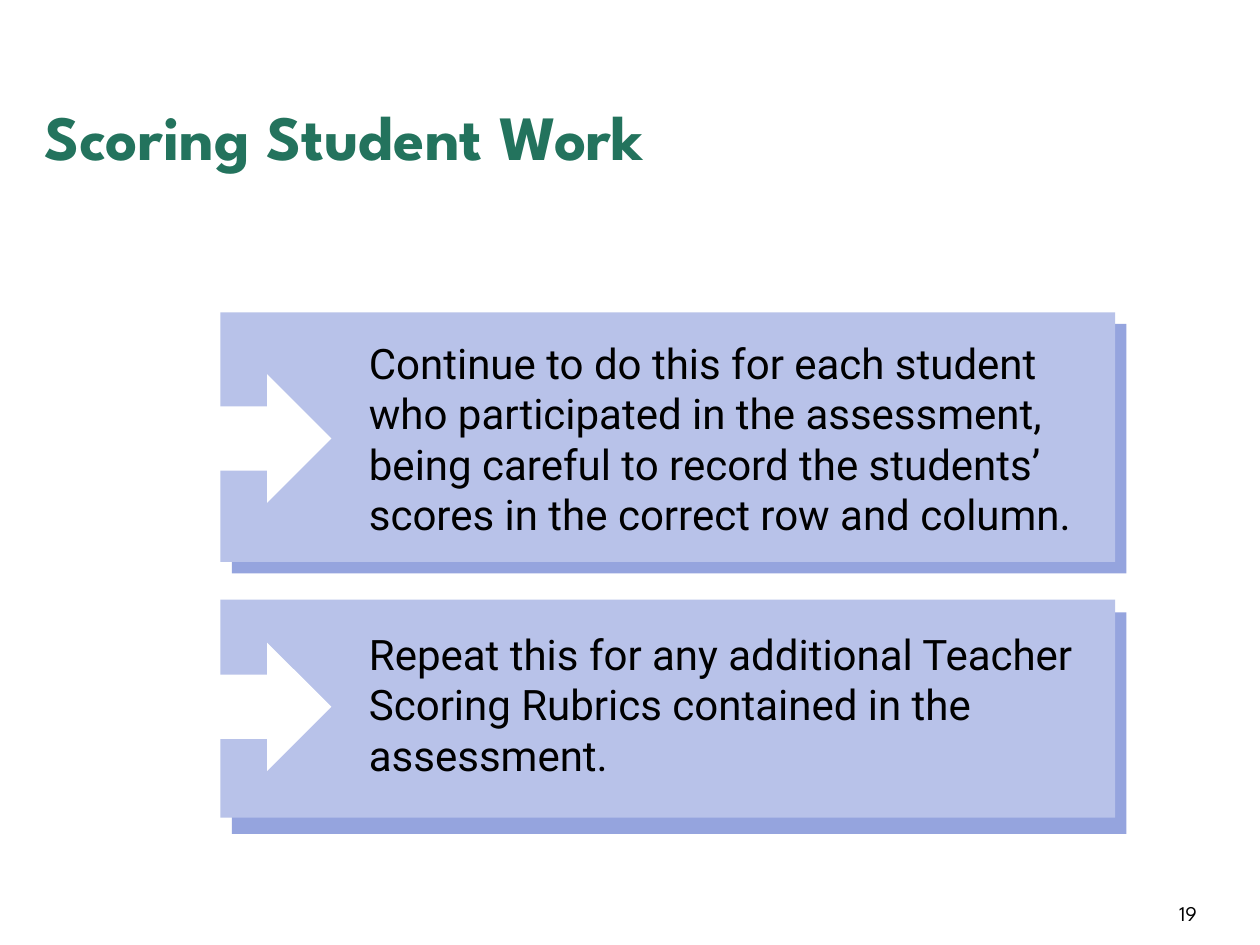
from pptx import Presentation
from pptx import util as u
from pptx.dml.color import RGBColor
from pptx.enum import shapes, text

SCALE = 9144  # EMU per px, 100 px to the inch
COLORS = {"green": "23735D", "card": "B8C2E9", "shade": "95A4DE",
          "white": "FFFFFF", "black": "000000"}
HEADING, BODY = "League Spartan", "Roboto"
RECT = shapes.MSO_SHAPE.RECTANGLE
ARROW = shapes.MSO_SHAPE.RIGHT_ARROW


def px(*values):
    return [u.Emu(v * SCALE) for v in values]


def write(p, words, font=BODY, size=24, color="black", bold=False,
          align=text.PP_ALIGN.LEFT, before=0):
    p.alignment = align
    p.space_before = u.Pt(before)
    r = p.add_run()
    r.text = words
    r.font.name, r.font.size, r.font.bold = font, u.Pt(size), bold
    r.font.color.rgb = RGBColor.from_string(COLORS[color])


class Deck:
    def __init__(self, width, height):
        self.prs = Presentation()
        self.prs.slide_width, self.prs.slide_height = px(width, height)
        self.s = self.prs.slides.add_slide(self.prs.slide_layouts[6])

    def shape(self, kind, box, color):
        sp = self.s.shapes.add_shape(kind, *px(*box))
        sp.shadow.inherit = False
        sp.fill.solid()
        sp.fill.fore_color.rgb = RGBColor.from_string(COLORS[color])
        sp.line.fill.background()

    def text(self, box, paragraphs, margins=(10, 5, 10, 5),
             anchor=text.MSO_ANCHOR.TOP, gap=0, **style):
        """Add a text box with gap points between its paragraphs."""
        tf = self.s.shapes.add_textbox(*px(*box)).text_frame
        tf.word_wrap = True
        tf.vertical_anchor = anchor
        (tf.margin_left, tf.margin_top,
         tf.margin_right, tf.margin_bottom) = px(*margins)
        for i, words in enumerate(paragraphs):
            p = tf.add_paragraph() if i else tf.paragraphs[0]
            write(p, words, before=gap if i else 0, **style)


def main():
    deck = Deck(1000, 750)
    left, width = 175, 710
    # top and height of each card, then top and height of its shade
    cards = [(248, 198, 257, 198), (476, 173, 486, 176)]
    for top, height, shade_top, shade_height in cards:
        deck.shape(RECT, (left + 9, shade_top, width, shade_height), "shade")
        deck.shape(RECT, (left, top, width, height), "card")

    deck.text((867, 695, 83, 40), ["19"], margins=(0, 0, 0, 0),
              anchor=text.MSO_ANCHOR.BOTTOM, font=HEADING, size=12,
              align=text.PP_ALIGN.RIGHT)
    deck.text((283, 263, 593, 413), [
        "Continue to do this for each student who participated in the "
        "assessment, being careful to record the students’ scores in the "
        "correct row and column.",
        "Repeat this for any additional Teacher Scoring Rubrics contained "
        "in the assessment.",
    ], gap=51)
    deck.text((35, 12, 900, 125), ["Scoring Student Work"],
              margins=(0, 5, 0, 0), anchor=text.MSO_ANCHOR.BOTTOM,
              font=HEADING, size=36, color="green", bold=True)

    for top in (297, 510):
        deck.shape(ARROW, (88, top, 175, 102), "white")
    deck.prs.save("out.pptx")


if __name__ == "__main__":
    main()
